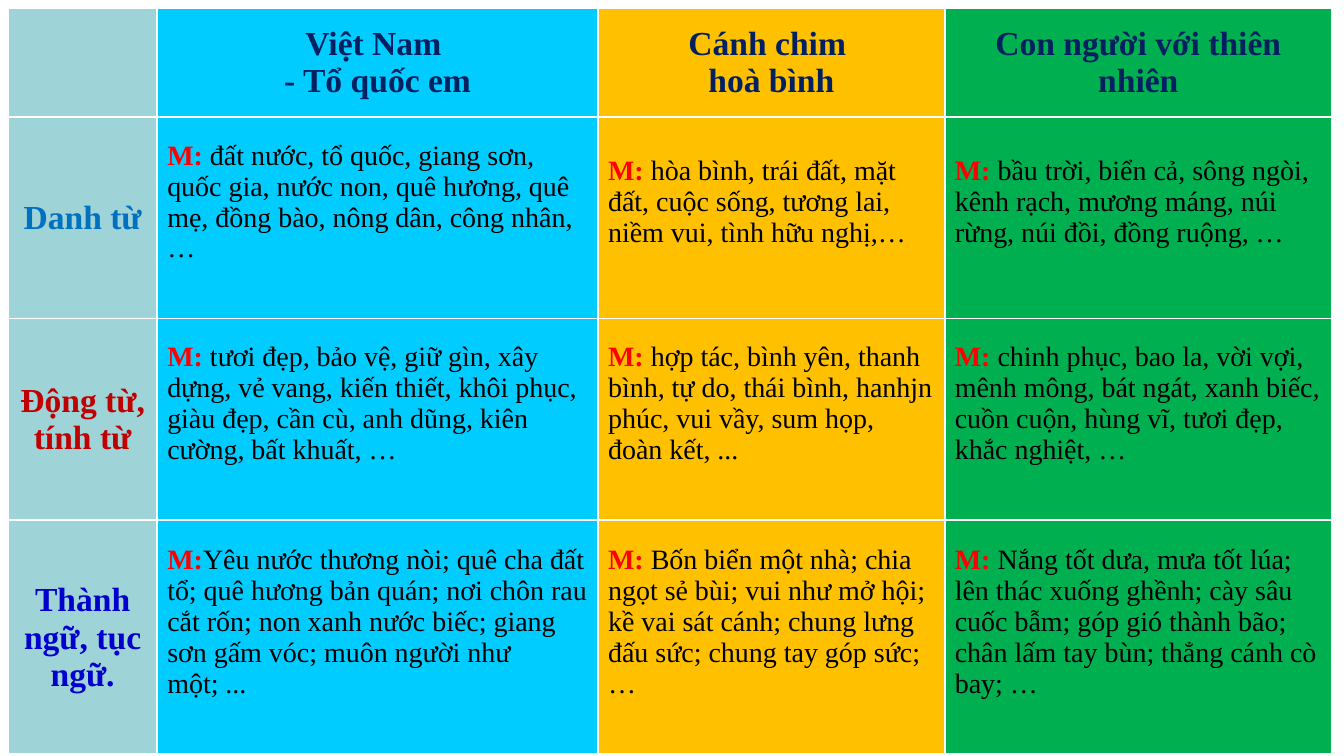
from dataclasses import dataclass

from lxml.etree import SubElement
from pptx import Presentation
from pptx.dml.color import RGBColor
from pptx.enum.text import MSO_ANCHOR, PP_ALIGN
from pptx.oxml.ns import qn
from pptx.util import Inches, Pt


@dataclass(frozen=True)
class Theme:
    font: str = "Times New Roman"
    heading_size: int = 18
    body_size: int = 15
    heading: str = "002060"
    marker: str = "FF0000"
    body: str = "000000"
    border: str = "FFFFFF"
    column_fills: tuple = ("9ED3D7", "00CCFF", "FFC000", "00B050")


THEME = Theme()
SLIDE_WIDTH = Inches(10)
COLUMN_WIDTHS = (1.11, 3.28, 2.58, 2.88)
ROW_HEIGHTS = (0.81, 1.5, 1.5, 1.75)
SIDE_MARGIN = Inches(0.15) // 2
MARKER = "M:"

# Each topic lists the lines of its heading
TOPICS = (
    ("Việt Nam ", "- Tổ quốc em"),
    ("Cánh chim ", "hoà bình"),
    ("Con người với thiên nhiên",),
)

# Word class, its colour, and the examples for each topic
WORD_CLASSES = (
    ("Danh từ", "0070C0", (
        " đất nước, tổ quốc, giang sơn, quốc gia, nước non, quê hương, quê mẹ, "
        "đồng bào, nông dân, công nhân, …",
        " hòa bình, trái đất, mặt đất, cuộc sống, tương lai, niềm vui, "
        "tình hữu nghị,…",
        " bầu trời, biển cả, sông ngòi, kênh rạch, mương máng, núi rừng, "
        "núi đồi, đồng ruộng, …",
    )),
    ("Động từ, tính từ", "C00000", (
        " tươi đẹp, bảo vệ, giữ gìn, xây dựng, vẻ vang, kiến thiết, khôi phục, "
        "giàu đẹp, cần cù, anh dũng, kiên cường, bất khuất, …",
        " hợp tác, bình yên, thanh bình, tự do, thái bình, hanhjn phúc, "
        "vui vầy, sum họp, đoàn kết, ...",
        " chinh phục, bao la, vời vợi, mênh mông, bát ngát, xanh biếc, "
        "cuồn cuộn, hùng vĩ, tươi đẹp, khắc nghiệt, …",
    )),
    ("Thành ngữ, tục ngữ.", "0000CC", (
        "Yêu nước thương nòi; quê cha đất tổ; quê hương bản quán; "
        "nơi chôn rau cắt rốn; non xanh nước biếc; giang sơn gấm vóc; "
        "muôn người như một; ...",
        " Bốn biển một nhà; chia ngọt sẻ bùi; vui như mở hội; "
        "kề vai sát cánh; chung lưng đấu sức; chung tay góp sức; …",
        " Nắng tốt dưa, mưa tốt lúa; lên thác xuống ghềnh; cày sâu cuốc bẫm; "
        "góp gió thành bão; chân lấm tay bùn; thẳng cánh cò bay; …",
    )),
)


def add_run(paragraph, text, size, color, bold):
    run = paragraph.add_run()
    run.text = text
    run.font.name = THEME.font
    run.font.size = Pt(size)
    run.font.bold = bold
    run.font.color.rgb = RGBColor.from_string(color)


def add_border(cell, side, width):
    line = SubElement(cell._tc.get_or_add_tcPr(), qn(f"a:ln{side}"), w=str(Pt(width)))
    fill = SubElement(line, qn("a:solidFill"))
    SubElement(fill, qn("a:srgbClr"), val=THEME.border)


def style_cell(cell, fill, bottom_border):
    for side in "LRT":
        add_border(cell, side, 1)
    add_border(cell, "B", bottom_border)
    cell.fill.solid()
    cell.fill.fore_color.rgb = RGBColor.from_string(fill)
    cell.vertical_anchor = MSO_ANCHOR.MIDDLE
    cell.margin_left = cell.margin_right = SIDE_MARGIN
    cell.margin_top = cell.margin_bottom = 0


def write_heading(cell, lines, color):
    frame = cell.text_frame
    for index, line in enumerate(lines):
        paragraph = frame.add_paragraph() if index else frame.paragraphs[0]
        paragraph.alignment = PP_ALIGN.CENTER
        add_run(paragraph, line, THEME.heading_size, color, True)


def write_examples(cell, examples):
    # The bottom margin lifts the examples by half a line above the middle
    cell.margin_bottom = Inches(0.23)
    paragraph = cell.text_frame.paragraphs[0]
    paragraph.alignment = PP_ALIGN.LEFT
    add_run(paragraph, MARKER, THEME.body_size, THEME.marker, True)
    add_run(paragraph, examples, THEME.body_size, THEME.body, False)


def add_vocabulary_table(slide):
    table = slide.shapes.add_table(
        len(ROW_HEIGHTS), len(COLUMN_WIDTHS), Inches(0.06), Inches(0.06),
        Inches(sum(COLUMN_WIDTHS)), Inches(sum(ROW_HEIGHTS))).table
    table.first_row = table.horz_banding = False
    for column, width in zip(table.columns, COLUMN_WIDTHS):
        column.width = Inches(width)
    last_row = len(ROW_HEIGHTS) - 1
    for row_index, height in enumerate(ROW_HEIGHTS):
        table.rows[row_index].height = Inches(height)
        for column_index, fill in enumerate(THEME.column_fills):
            style_cell(table.cell(row_index, column_index), fill,
                       3 if row_index == last_row else 1)
    return table


def main():
    # Widescreen slide, 16:9
    presentation = Presentation()
    presentation.slide_width = SLIDE_WIDTH
    presentation.slide_height = SLIDE_WIDTH * 9 // 16
    slide = presentation.slides.add_slide(presentation.slide_layouts[6])
    table = add_vocabulary_table(slide)

    # Topic headings
    for column, topic in enumerate(TOPICS, start=1):
        write_heading(table.cell(0, column), topic, THEME.heading)

    # One row for each word class
    for row, (word_class, color, examples) in enumerate(WORD_CLASSES, start=1):
        write_heading(table.cell(row, 0), [word_class], color)
        for column, words in enumerate(examples, start=1):
            write_examples(table.cell(row, column), words)

    presentation.save("out.pptx")


if __name__ == "__main__":
    main()
